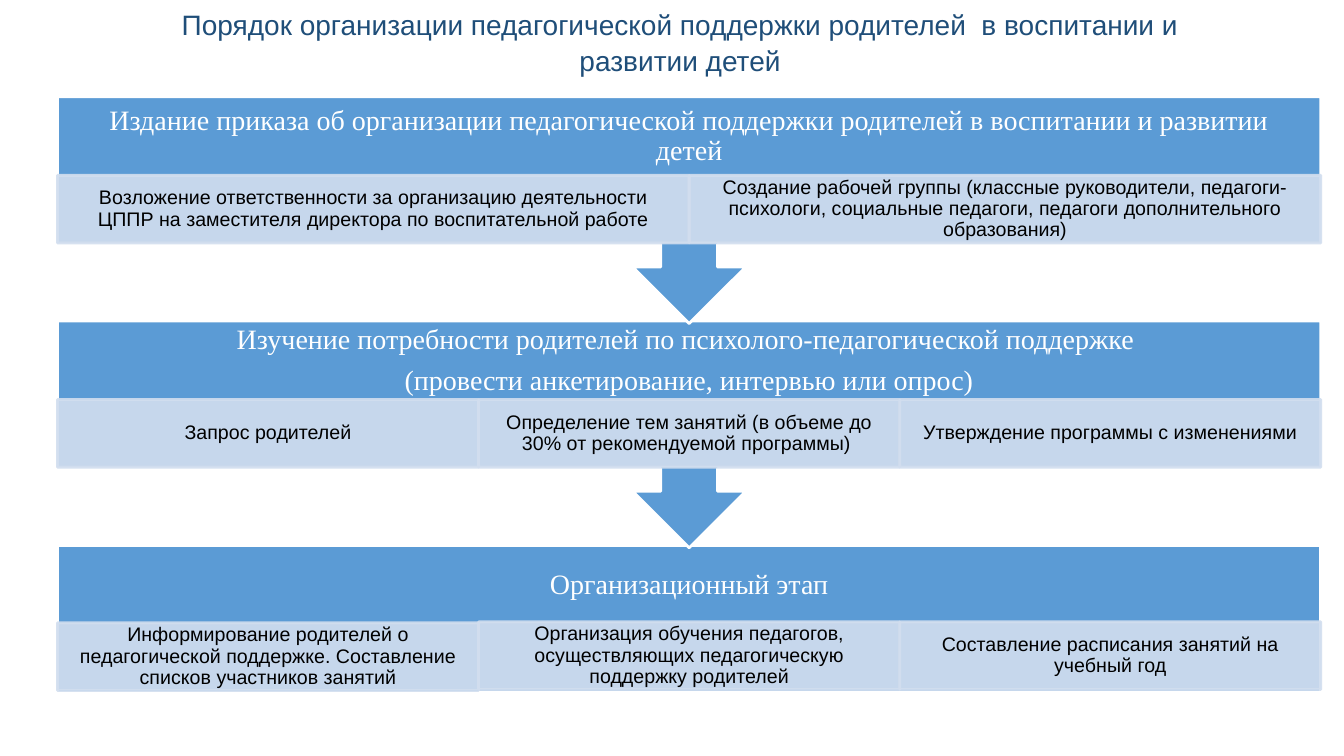
from lxml.etree import SubElement
from pptx import Presentation
from pptx.dml.color import RGBColor as RGB
from pptx.enum.shapes import MSO_SHAPE as SHAPE
from pptx.enum.text import MSO_ANCHOR as ANCHOR, MSO_AUTO_SIZE as AUTO, PP_ALIGN as ALIGN
from pptx.oxml.ns import qn
from pptx.util import Inches, Pt

TITLE = "Порядок организации педагогической поддержки родителей  в воспитании и развитии детей"
STAGES = [
    (["Издание приказа об организации педагогической поддержки родителей в воспитании и развитии детей"],
     [("Возложение ответственности за организацию деятельности ЦППР на заместителя директора "
       "по воспитательной работе", 0.78),
      ("Создание рабочей группы (классные руководители, педагоги-психологи, социальные педагоги, "
       "педагоги дополнительного образования)", 0.78)]),
    (["Изучение потребности родителей по психолого-педагогической поддержке ",
      "(провести анкетирование, интервью или опрос)"],
     [("Запрос родителей", 0.78),
      ("Определение тем занятий (в объеме до 30% от рекомендуемой программы) ", 0.78),
      ("Утверждение программы с изменениями", 0.78)]),
    (["Организационный этап"],
     [("Информирование родителей о педагогической поддержке. Составление списков участников занятий", 0.77),
      ("Организация обучения педагогов, осуществляющих педагогическую поддержку родителей", 0.76),
      ("Составление расписания занятий на учебный год", 0.76)]),
]
HEX = {"title": "1F4E79", "band": "5B9BD5", "cell": "D2DEEF", "white": "FFFFFF", "text": "000000"}
LEFT, TOP, WIDTH, PITCH = 0.57, 0.96, 12.53, 2.225
ARROW, BLOCK, HEAD, CELL = 2.25, 1.46, 0.79, 0.67


def write(shape, lines, size, font, color, inset, anchor=ANCHOR.MIDDLE, spacing=0.9, after=0):
    frame = shape.text_frame
    frame.word_wrap = True
    frame.auto_size = AUTO.NONE
    frame.vertical_anchor = anchor
    frame.margin_left = frame.margin_right = Inches(inset[0])
    frame.margin_top = frame.margin_bottom = Inches(inset[1])
    for i, line in enumerate(lines):
        para = frame.paragraphs[0] if i == 0 else frame.add_paragraph()
        para.alignment = ALIGN.CENTER
        para.line_spacing = spacing
        para.space_before = Pt(0)
        para.space_after = Pt(after)
        run = para.add_run()
        run.text = line
        run.font.size = Pt(size)
        run.font.name = font
        run.font.color.rgb = RGB.from_string(HEX[color])


def draw(kind, box, fill, edge, alpha=None):
    shape = slide.shapes.add_shape(kind, *map(Inches, box))
    shape.shadow.inherit = False
    shape.fill.solid()
    shape.fill.fore_color.rgb = RGB.from_string(HEX[fill])
    shape.line.color.rgb = RGB.from_string(HEX[edge])
    shape.line.width = Pt(2)
    if alpha:
        for tone in shape.element.spPr.iter(qn("a:srgbClr")):
            SubElement(tone, qn("a:alpha"), val=str(alpha * 1000))
    return shape


deck = Presentation()
deck.slide_width, deck.slide_height = Inches(13.33), Inches(7.5)
slide = deck.slides.add_slide(deck.slide_layouts[5])

title = slide.shapes.title
title.left, title.top, title.width, title.height = map(Inches, (1.14, 0, 10.71, 0.82))
write(title, [TITLE], 20, "Arial", "title", (0.1, 0.05), anchor=ANCHOR.TOP, spacing=1.07)
props = title.text_frame.paragraphs[0]._p.get_or_add_pPr()
props.set("marL", str(Inches(0.5)))
props.set("indent", "0")

last = len(STAGES) - 1
for row in range(last, -1, -1):
    heads, cells = STAGES[row]
    top = TOP + row * PITCH
    if row == last:
        draw(SHAPE.RECTANGLE, (LEFT, top, WIDTH, BLOCK), "band", "white")
    else:
        band = draw(SHAPE.UP_ARROW_CALLOUT, (LEFT, top, WIDTH, ARROW), "band", "white")
        band.rotation = 180
    label = slide.shapes.add_textbox(*map(Inches, (LEFT, top, WIDTH, HEAD)))
    write(label, heads, 20, "Times New Roman", "white", (0.16, 0.16), after=8)
    wide = WIDTH / len(cells)
    for col, (text, drop) in enumerate(cells):
        cell = draw(SHAPE.RECTANGLE, (LEFT + col * wide, top + drop, wide, CELL), "cell", "cell", alpha=90)
        write(cell, [text], 14, "Arial", "text", (0.11, 0.02), after=5)

deck.save("out.pptx")
